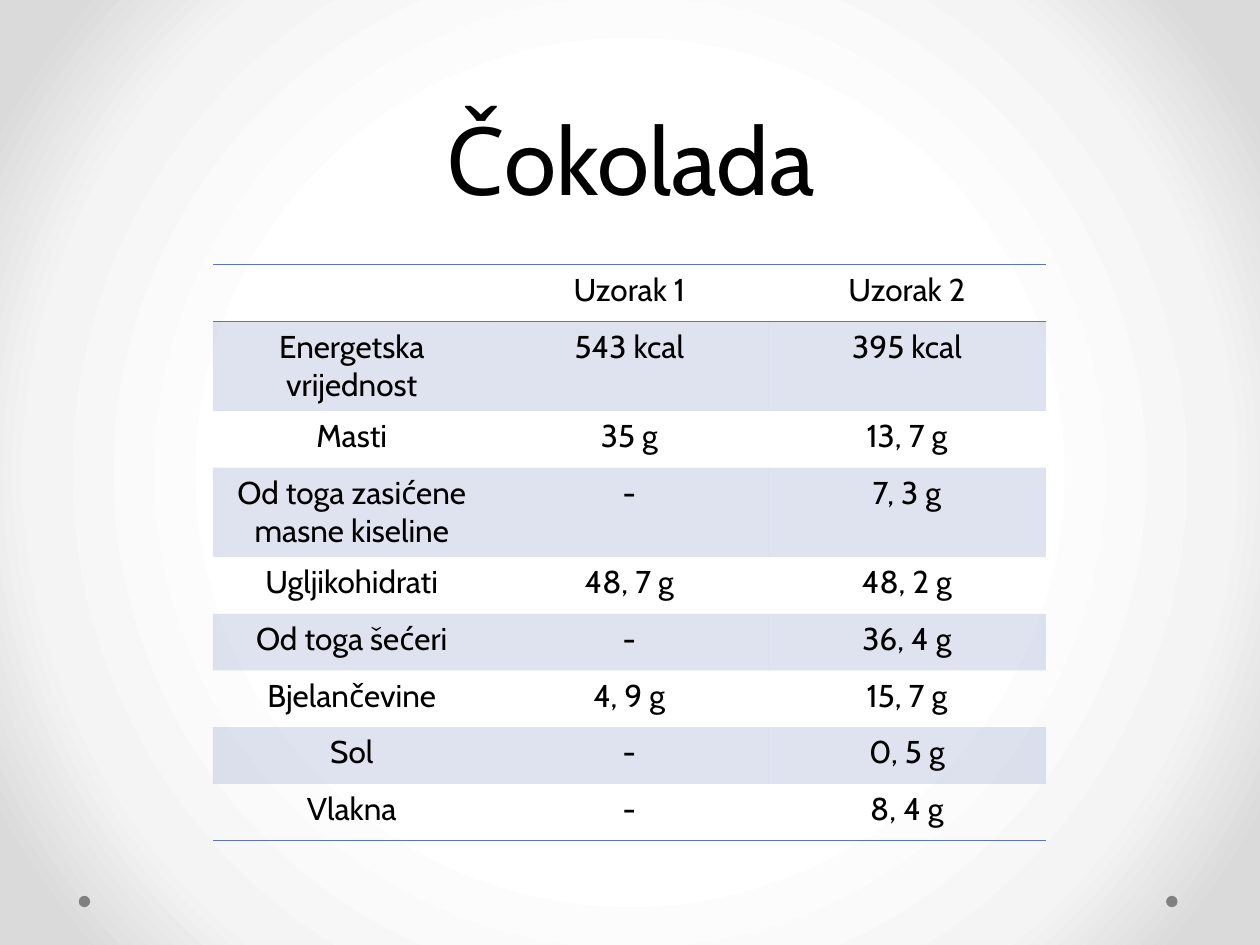
from dataclasses import dataclass

from lxml.etree import SubElement
from pptx import Presentation
from pptx.dml.color import RGBColor
from pptx.enum.shapes import MSO_SHAPE
from pptx.enum.text import MSO_ANCHOR, MSO_AUTO_SIZE, PP_ALIGN
from pptx.oxml import parse_xml
from pptx.oxml.ns import nsdecls, qn
from pptx.util import Inches, Pt


@dataclass(frozen=True)
class Theme:
    font: str = "Cabin"
    ink: str = "000000"
    accent: str = "6076B4"
    dot: str = "808080"
    band_opacity: int = 20
    title_size: int = 54
    title_leading: int = 58
    body_size: int = 18
    rule_width: int = 1
    glow: tuple = ((50, "FFFFFF"), (76, "F4F4F4"), (92, "DADADA"))
    plain_table: str = "{2D5ABB26-0587-4C30-8999-92F81FD0307C}"


def write(frame, text, *, font, size, color, align=PP_ALIGN.CENTER, leading=None):
    """Put one formatted paragraph into a text frame."""
    paragraph = frame.paragraphs[0]
    paragraph.alignment = align
    if leading:
        paragraph.line_spacing = Pt(leading)
    run = paragraph.add_run()
    run.text = text
    run.font.name = font
    run.font.size = Pt(size)
    run.font.color.rgb = RGBColor.from_string(color)


class SlideBuilder:
    """Holds the theme and current slide; lengths are shares of the slide."""

    def __init__(self, deck, theme):
        self.theme = theme
        self.width, self.height = deck.slide_width, deck.slide_height
        self.slide = deck.slides.add_slide(deck.slide_layouts[5])

    def box(self, left, top, width, height):
        return (int(left * self.width), int(top * self.height),
                int(width * self.width), int(height * self.height))

    def background(self):
        self.slide.background.fill.gradient()
        gradient = next(self.slide.element.iter(qn("a:gradFill")))
        for part in list(gradient):
            gradient.remove(part)
        stops = SubElement(gradient, qn("a:gsLst"))
        for position, color in self.theme.glow:
            stop = SubElement(stops, qn("a:gs"), pos=str(position * 1000))
            SubElement(stop, qn("a:srgbClr"), val=color)
        circle = SubElement(gradient, qn("a:path"), path="circle")
        SubElement(circle, qn("a:fillToRect"),
                   {side: "50000" for side in "ltrb"})

    def dot(self, center_x, center_y, diameter):
        share_x, share_y = diameter, diameter * self.width / self.height
        dot = self.slide.shapes.add_shape(MSO_SHAPE.OVAL, *self.box(
            center_x - share_x / 2, center_y - share_y / 2, share_x, share_y))
        dot.shadow.inherit = False
        dot.fill.solid()
        dot.fill.fore_color.rgb = RGBColor.from_string(self.theme.dot)
        dot.line.fill.background()

    def title(self, text, *area):
        title = self.slide.shapes.title
        title.left, title.top, title.width, title.height = self.box(*area)
        frame = title.text_frame
        frame.auto_size = MSO_AUTO_SIZE.NONE
        frame.vertical_anchor = MSO_ANCHOR.BOTTOM
        write(frame, text, font=self.theme.font, size=self.theme.title_size,
              color=self.theme.ink, leading=self.theme.title_leading)

    def table(self, rows, left, top, width, row_height):
        area = self.box(left, top, width, row_height * len(rows))
        table = self.slide.shapes.add_table(len(rows), len(rows[0]), *area).table
        table.first_row = table.horz_banding = False
        next(table._tbl.iter(qn("a:tableStyleId"))).text = self.theme.plain_table
        for row_index, row in enumerate(rows):
            for column, text in enumerate(row):
                cell = table.cell(row_index, column)
                if text:
                    write(cell.text_frame, text, font=self.theme.font,
                          size=self.theme.body_size, color=self.theme.ink)
                self.band(cell, row_index % 2 == 1)
                # Rules frame the header and close the last row
                if row_index == 0:
                    self.rules(cell, "lnT", "lnB")
                elif row_index == len(rows) - 1:
                    self.rules(cell, "lnB")

    def band(self, cell, shaded):
        if not shaded:
            cell.fill.background()
            return
        cell.fill.solid()
        cell.fill.fore_color.rgb = RGBColor.from_string(self.theme.accent)
        color = next(cell._tc.tcPr.iter(qn("a:srgbClr")))
        SubElement(color, qn("a:alpha"), val=str(self.theme.band_opacity * 1000))

    def rules(self, cell, *edges):
        for order, edge in enumerate(edges):
            cell._tc.tcPr.insert(order, parse_xml(
                f'<a:{edge} {nsdecls("a")} w="{Pt(self.theme.rule_width)}">'
                f'<a:solidFill><a:srgbClr val="{self.theme.accent}"/></a:solidFill>'
                f'</a:{edge}>'))


NUTRITION = [
    ("", "Uzorak 1", "Uzorak 2"),
    ("Energetska vrijednost", "543 kcal", "395 kcal"),
    ("Masti", "35 g", "13, 7 g"),
    ("Od toga zasićene masne kiseline", "-", "7, 3 g"),
    ("Ugljikohidrati", "48, 7 g", "48, 2 g"),
    ("Od toga šećeri", "-", "36, 4 g"),
    ("Bjelančevine", "4, 9 g", "15, 7 g"),
    ("Sol", "-", "0, 5 g"),
    ("Vlakna", "-", "8, 4 g"),
]


def main():
    deck = Presentation()
    deck.slide_width, deck.slide_height = Inches(10), Inches(7.5)
    page = SlideBuilder(deck, Theme())

    # Backdrop with a dot in each lower corner
    page.background()
    for center_x in (0.93, 0.067):
        page.dot(center_x, 0.954, 0.009)

    # Heading and nutrition comparison
    page.title("Čokolada", 0.05, 0, 0.9, 0.2333)
    page.table(NUTRITION, 0.169, 0.28, 0.661, 0.06)

    deck.save("out.pptx")


if __name__ == "__main__":
    main()
